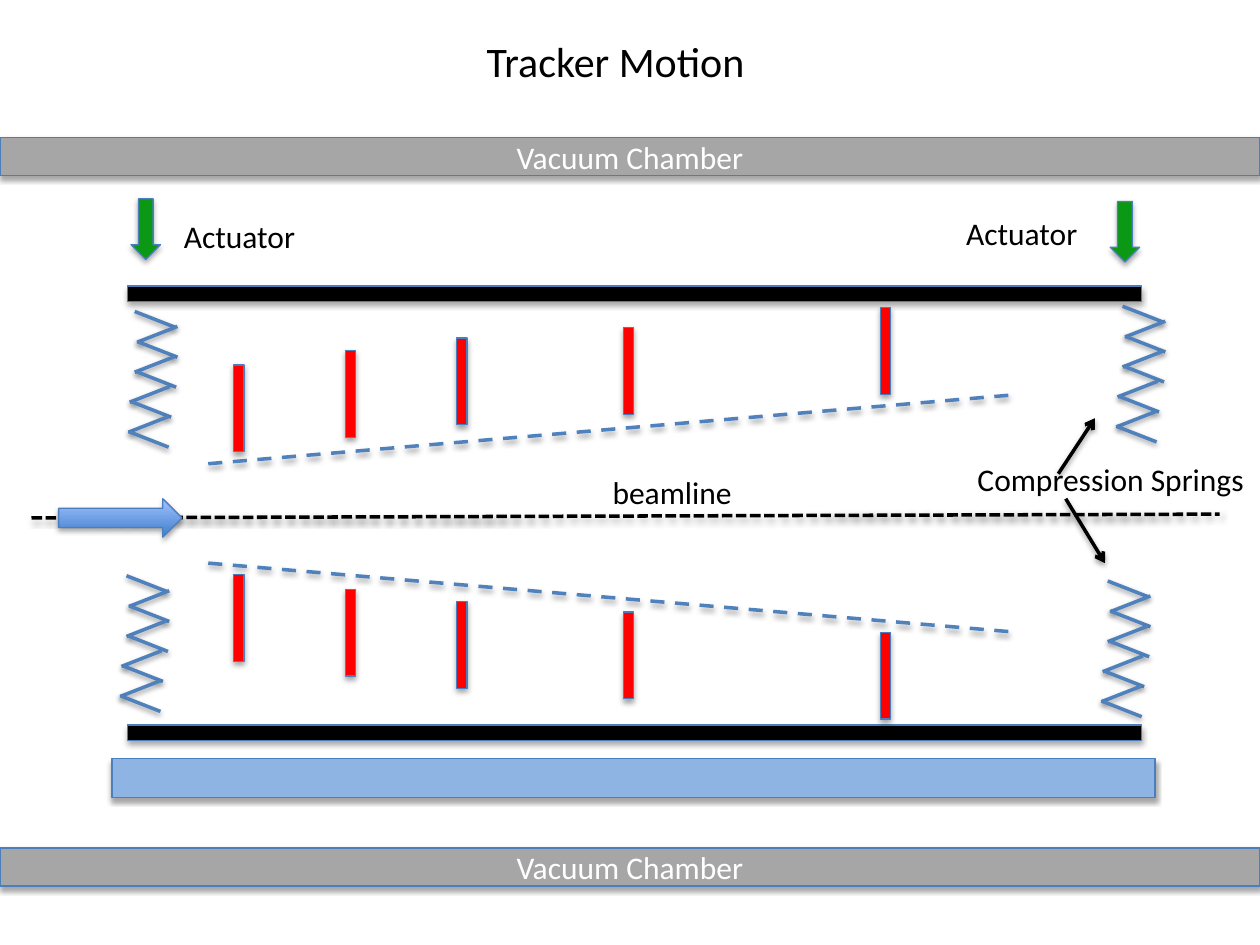
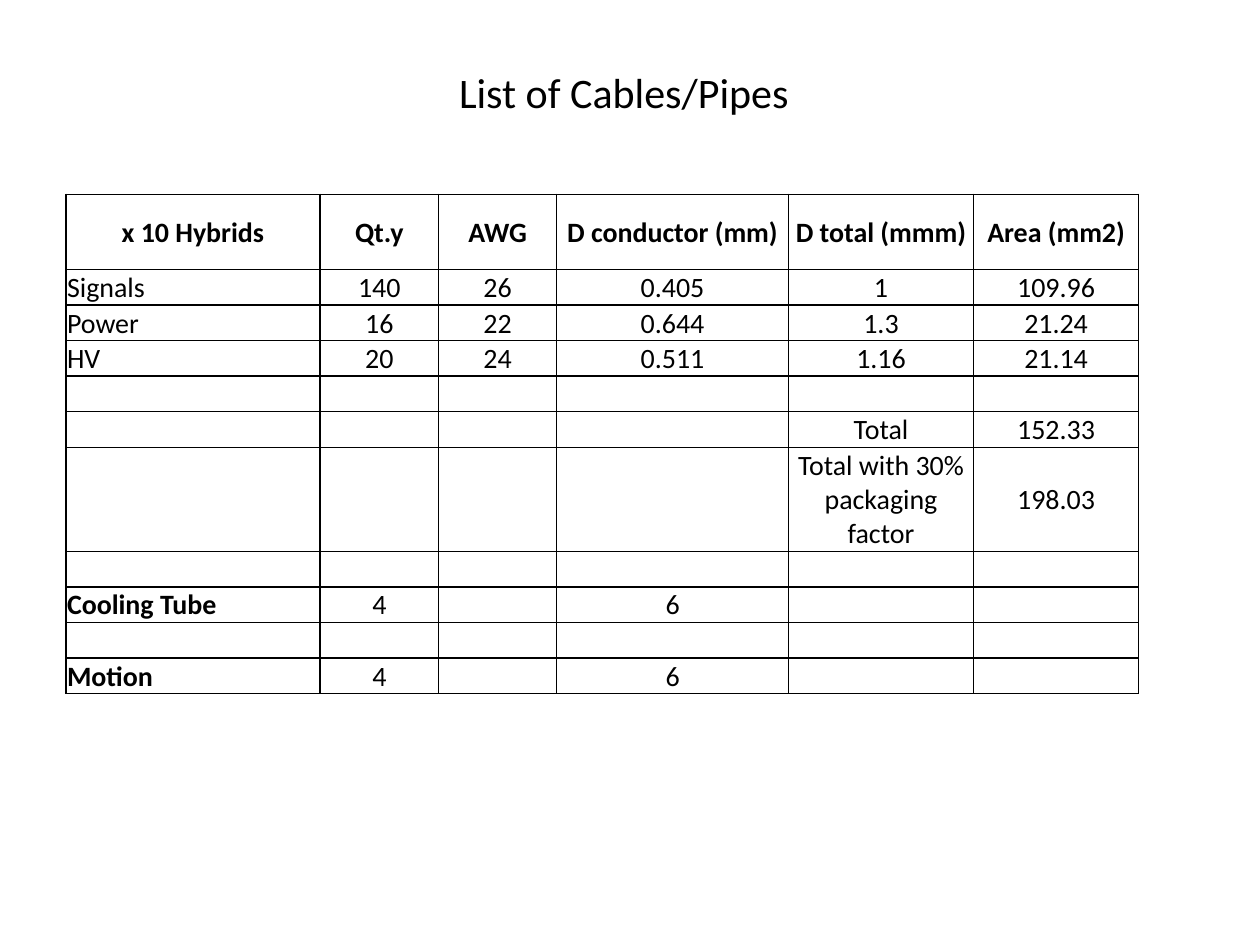
"""Build two slides: the tracker motion diagram and the list of cables and pipes."""
import pptx
import pptx.dml.color
import pptx.enum.dml
import pptx.enum.shapes
import pptx.enum.text
import pptx.oxml.ns
import pptx.util
from lxml import etree

Pt = pptx.util.Pt
RGBColor = pptx.dml.color.RGBColor
ALIGN = pptx.enum.text.PP_ALIGN
ANCHOR = pptx.enum.text.MSO_ANCHOR
SHAPE = pptx.enum.shapes.MSO_SHAPE
DASH = pptx.enum.dml.MSO_LINE
qn = pptx.oxml.ns.qn

BLACK = RGBColor(0x00, 0x00, 0x00)
WHITE = RGBColor(0xFF, 0xFF, 0xFF)
RED = RGBColor(0xFF, 0x00, 0x00)
GREEN = RGBColor(0x0A, 0x98, 0x15)
GREY = RGBColor(0xA6, 0xA6, 0xA6)
LIGHT_BLUE = RGBColor(0x8E, 0xB4, 0xE3)
LINE_BLUE = RGBColor(0x4F, 0x81, 0xBD)
EDGE_BLUE = RGBColor(0x4B, 0x7E, 0xBC)
FONT = "Calibri"


def write_text(frame, text, size=18, color=BLACK, bold=False, align=ALIGN.LEFT):
    paragraph = frame.paragraphs[0]
    paragraph.alignment = align
    span = paragraph.add_run()
    span.text = text
    span.font.name = FONT
    span.font.size = Pt(size)
    span.font.bold = bold
    span.font.color.rgb = color


def draw_line(page, x1, y1, x2, y2, color=LINE_BLUE, dash=None, arrow=False):
    line = page.shapes.add_connector(
        pptx.enum.shapes.MSO_CONNECTOR.STRAIGHT, Pt(x1), Pt(y1), Pt(x2), Pt(y2)).line
    line.color.rgb = color
    line.width = Pt(2)
    if dash:
        line.dash_style = dash
    if arrow:
        etree.SubElement(line._get_or_add_ln(), qn("a:tailEnd"), type="arrow")


deck = pptx.Presentation()
deck.slide_width, deck.slide_height = Pt(720), Pt(540)
pages = []
for heading, left, top, width in [
    ("Tracker Motion", 268.5, 16.5, 166.5),
    ("List of Cables/Pipes", 254, 34.5, 205),
]:
    page = deck.slides.add_slide(deck.slide_layouts[5])
    title = page.shapes.title
    title.left, title.top, title.width, title.height = Pt(left), Pt(top), Pt(width), Pt(36)
    title.text_frame.word_wrap = False
    title.text_frame.vertical_anchor = ANCHOR.MIDDLE
    write_text(title.text_frame, heading, size=24, align=ALIGN.CENTER)
    pages.append(page)
motion_page, cable_page = pages

MIRROR_SUM = 586.6
SENSOR_HEIGHT = 49.6
PLATE_TOP, PLATE_HEIGHT = 163.5, 8.75
sensors = [(133.6, 208.6), (197.4, 200.3), (261, 193.2), (356.2, 187.2), (503, 175.7)]
blocks = [
    (SHAPE.RECTANGLE, 64, 433.5, 596, 22.3, LIGHT_BLUE, 0, ""),
    (SHAPE.RIGHT_ARROW, 33.5, 285, 70.5, 22, None, 0, ""),
]
for top in (78.5, 484.5):
    blocks.append((SHAPE.RECTANGLE, 0, top, 720, 21.8, GREY, 0, "Vacuum Chamber"))
for left, top in [(66, 122.5), (625.5, 124)]:
    blocks.append((SHAPE.RIGHT_ARROW, left, top, 34.6, 16.8, GREEN, 90, ""))
for mirrored in (False, True):
    plate_top = MIRROR_SUM - PLATE_TOP - PLATE_HEIGHT if mirrored else PLATE_TOP
    blocks.append((SHAPE.RECTANGLE, 73, plate_top, 579.5, PLATE_HEIGHT, BLACK, 0, ""))
    for left, top in sensors:
        sensor_top = MIRROR_SUM - top - SENSOR_HEIGHT if mirrored else top
        blocks.append((SHAPE.RECTANGLE, left, sensor_top, 5.8, SENSOR_HEIGHT, RED, 0, ""))

draw_line(motion_page, 18, 296, 697, 293.8, color=BLACK, dash=DASH.SQUARE_DOT)
for kind, left, top, width, height, color, rotation, text in blocks:
    block = motion_page.shapes.add_shape(kind, Pt(left), Pt(top), Pt(width), Pt(height))
    block.rotation = rotation
    if color is not None:
        block.fill.solid()
        block.fill.fore_color.rgb = color
    block.line.color.rgb = EDGE_BLUE
    block.line.width = Pt(0.75)
    if text:
        block.text_frame.vertical_anchor = ANCHOR.MIDDLE
        write_text(block.text_frame, text, color=WHITE, align=ALIGN.CENTER)

for start, end in [(265, 225.5), (321.8, 361.3)]:
    draw_line(motion_page, 119, start, 580.8, end, dash=DASH.DASH)

COIL_SHIFTS = [0, 1.4, 1.4, 0, 0.7, -2.9, -2.2, -3.6, -3.6]
COIL_WIDTH, COIL_HEIGHT, COIL_STEP = 23, 9, 8.57
for spring_left, spring_top in [(641.5, 175), (633, 332), (77, 178), (72.3, 329)]:
    for index, shift in enumerate(COIL_SHIFTS):
        left, top = spring_left + shift, spring_top + index * COIL_STEP
        ends = [left, left + COIL_WIDTH]
        if index % 2:
            ends.reverse()
        draw_line(motion_page, ends[0], top, ends[1], top + COIL_HEIGHT)

for text, left, top, width in [
    ("Compression Springs", 551.5, 259.5, 168.5),
    ("Actuator", 545, 119, 79),
    ("Actuator", 98, 120.5, 79),
    ("beamline", 343, 267, 83.5),
]:
    box = motion_page.shapes.add_textbox(Pt(left), Pt(top), Pt(width), Pt(29))
    box.text_frame.word_wrap = False
    box.text_frame.auto_size = pptx.enum.text.MSO_AUTO_SIZE.SHAPE_TO_FIT_TEXT
    write_text(box.text_frame, text)

draw_line(motion_page, 604.8, 270.7, 625.7, 239, color=BLACK, arrow=True)
draw_line(motion_page, 609, 285, 631.4, 321.8, color=BLACK, arrow=True)

rows = [
    ["x 10 Hybrids", "Qt.y", "AWG", "D conductor (mm)", "D total (mmm)", "Area (mm2)"],
    ["Signals", "140", "26", "0.405", "1", "109.96"],
    ["Power", "16", "22", "0.644", "1.3", "21.24"],
    ["HV", "20", "24", "0.511", "1.16", "21.14"],
    [""] * 6,
    ["", "", "", "", "Total", "152.33"],
    ["", "", "", "", "Total with 30% packaging factor", "198.03"],
    [""] * 6,
    ["Cooling Tube", "4", "", "6", "", ""],
    [""] * 6,
    ["Motion", "4", "", "6", "", ""],
]
column_widths = [145.4, 67.6, 67.6, 132.4, 105.9, 94.2]
row_heights = {0: 43, 6: 37.4}
HEADER_ROW, PACKAGING_ROW = 0, 6
BOLD_LABELS = ("Cooling Tube", "Motion")
table = cable_page.shapes.add_table(
    len(rows), len(column_widths), Pt(37.6), Pt(111), Pt(sum(column_widths)), Pt(283)).table
table.first_row = False
table.horz_banding = False
for column, width in zip(table.columns, column_widths):
    column.width = Pt(width)
for row_index, values in enumerate(rows):
    table.rows[row_index].height = Pt(row_heights.get(row_index, 18.7))
    for column_index, text in enumerate(values):
        cell = table.cell(row_index, column_index)
        cell.margin_left = cell.margin_top = cell.margin_right = Pt(0.75)
        cell.margin_bottom = 0
        centred = row_index in (HEADER_ROW, PACKAGING_ROW)
        cell.vertical_anchor = ANCHOR.MIDDLE if centred else ANCHOR.BOTTOM
        properties = cell._tc.get_or_add_tcPr()
        for side in ("a:lnL", "a:lnR", "a:lnT", "a:lnB"):
            border = etree.SubElement(properties, qn(side), w=str(Pt(1)))
            fill = etree.SubElement(border, qn("a:solidFill"))
            etree.SubElement(fill, qn("a:srgbClr"), val=str(BLACK))
        cell.fill.background()
        if text:
            label = column_index == 0 and row_index != HEADER_ROW
            write_text(cell.text_frame, text, size=16,
                       bold=row_index == HEADER_ROW or text in BOLD_LABELS,
                       align=ALIGN.LEFT if label else ALIGN.CENTER)
        else:
            etree.SubElement(cell.text_frame.paragraphs[0]._p, qn("a:endParaRPr"), sz="1600")

deck.save("out.pptx")
